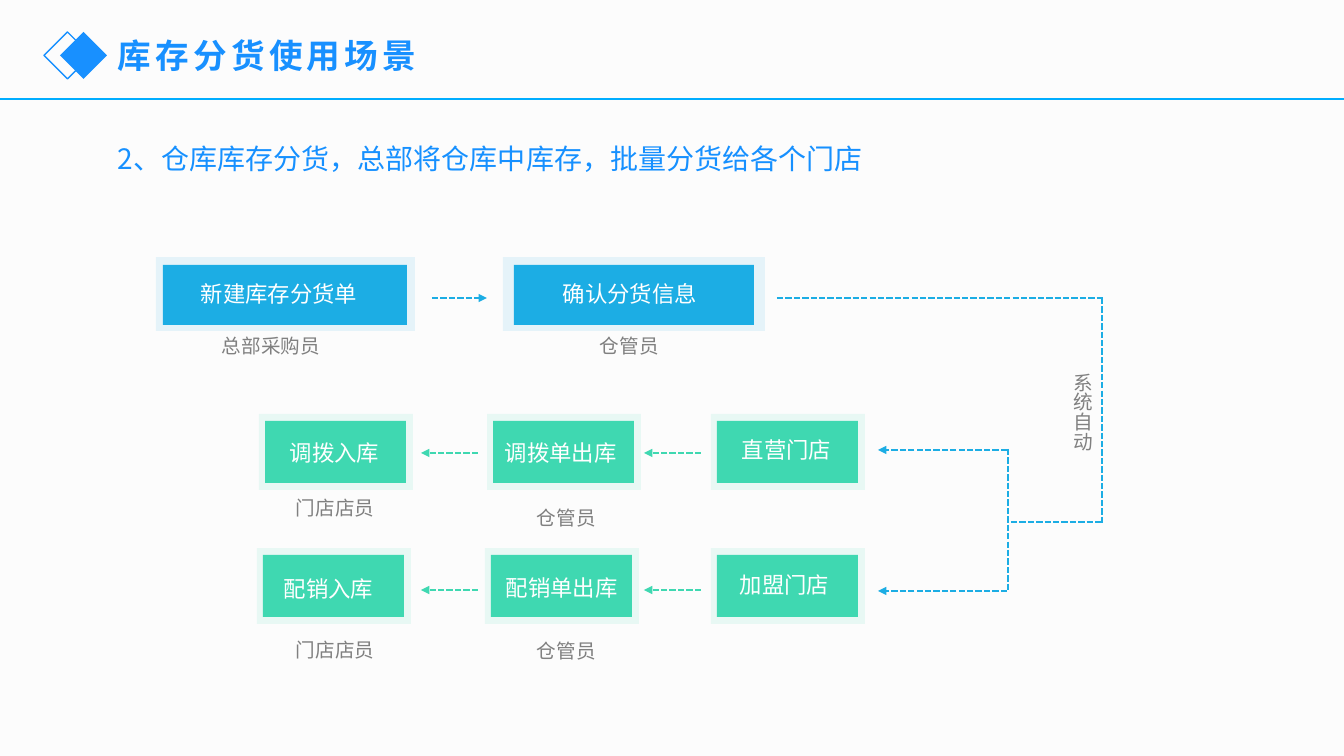
from lxml.etree import SubElement
from pptx import Presentation
from pptx.dml.color import RGBColor
from pptx.enum.dml import MSO_LINE
from pptx.enum.shapes import MSO_CONNECTOR, MSO_SHAPE
from pptx.enum.text import MSO_AUTO_SIZE
from pptx.oxml.ns import qn
from pptx.util import Pt

PX = 914400 / 100.8
FONT = "Noto Sans CJK SC"
COLORS = {
    "background": "FCFCFC",
    "title": "1890FF",
    "heading": "1690FF",
    "rule": "00ADFF",
    "blue": "1CADE4",
    "green": "3FD8B1",
    "gray": "808080",
    "white": "FFFFFF",
}


def px(*lengths):
    return [round(length * PX) for length in lengths]


def rgb(name):
    return RGBColor.from_string(COLORS[name])


def add_text(slide, text, box, size, color, bold=False, spacing=0, wrap=False, vertical=False):
    shape = slide.shapes.add_textbox(*px(*box))
    frame = shape.text_frame
    frame.word_wrap = wrap
    frame.auto_size = MSO_AUTO_SIZE.SHAPE_TO_FIT_TEXT
    if vertical:
        frame._txBody.bodyPr.set("vert", "eaVert")
    run = frame.paragraphs[0].add_run()
    run.text = text
    run.font.name = FONT
    run.font.size = Pt(size)
    run.font.bold = bold
    run.font.color.rgb = rgb(color)
    if spacing:
        run._r.get_or_add_rPr().set("spc", str(spacing * 100))


def add_block(slide, kind, box, fill=None, line=None, opacity=100):
    shape = slide.shapes.add_shape(kind, *px(*box))
    shape.shadow.inherit = False
    if fill:
        shape.fill.solid()
        shape.fill.fore_color.rgb = rgb(fill)
        if opacity < 100:
            color = shape._element.spPr.find(qn("a:solidFill"))[0]
            SubElement(color, qn("a:alpha")).set("val", str(opacity * 1000))
    else:
        shape.fill.background()
    if line:
        shape.line.color.rgb = rgb(line)
        shape.line.width = Pt(1)
    else:
        shape.line.fill.background()


def add_line(slide, ends, color, width=1.5, dashed=True, arrow=False):
    connector = slide.shapes.add_connector(MSO_CONNECTOR.STRAIGHT, *px(*ends))
    connector.line.color.rgb = rgb(color)
    connector.line.width = Pt(width)
    if dashed:
        connector.line.dash_style = MSO_LINE.SQUARE_DOT
    if arrow:
        SubElement(connector.line._get_or_add_ln(), qn("a:tailEnd")).set("type", "triangle")
    SubElement(connector._element.spPr, qn("a:effectLst"))


def add_step(slide, halo, core, color, label, label_box):
    add_block(slide, MSO_SHAPE.RECTANGLE, halo, color, opacity=10)
    add_block(slide, MSO_SHAPE.RECTANGLE, core, color)
    add_text(slide, label, label_box, 16, "white")


def add_header(slide):
    add_line(slide, (0, 99, 1344, 99), "rule", width=1, dashed=False)
    add_block(slide, MSO_SHAPE.DIAMOND, (44, 32, 47, 47), line="title")
    add_block(slide, MSO_SHAPE.DIAMOND, (60, 32, 47, 47), fill="title")
    add_text(slide, "库存分货使用场景", (108, 30, 553, 50), 24, "title", bold=True, spacing=3)
    add_text(slide, "2、仓库库存分货，总部将仓库中库存，批量分货给各个门店",
             (108, 137, 771, 44), 20, "heading", wrap=True)


def add_steps(slide):
    for label, halo_left, halo_width, core_left, core_width, label_left, label_width in (
        ("新建库存分货单", 156, 259, 163, 244, 191, 178),
        ("确认分货信息", 503, 262, 514, 240, 553, 156),
    ):
        add_step(slide, (halo_left, 257, halo_width, 74), (core_left, 265, core_width, 60),
                 "blue", label, (label_left, 275, label_width, 37))
    for label, left, top, label_left, label_top, label_width in (
        ("直营门店", 711, 414, 732, 431, 111),
        ("调拨单出库", 487, 414, 495, 434, 133),
        ("调拨入库", 259, 414, 280, 434, 111),
        ("加盟门店", 711, 548, 730, 566, 111),
        ("配销单出库", 485, 548, 496, 569, 133),
        ("配销入库", 257, 548, 274, 570, 111),
    ):
        add_step(slide, (left, top, 154, 76), (left + 6, top + 7, 141, 62),
                 "green", label, (label_left, label_top, label_width, 37))


def add_roles(slide):
    for role, left, top, width in (
        ("总部采购员", 212, 329, 119),
        ("仓管员", 590, 329, 80),
        ("仓管员", 527, 501, 80),
        ("仓管员", 527, 634, 80),
        ("门店店员", 286, 491, 100),
        ("门店店员", 286, 633, 100),
    ):
        add_text(slide, role, (left, top, width, 34), 14, "gray")
    add_text(slide, "系统自动", (1055, 363, 44, 90), 14, "gray", vertical=True)


def add_flow(slide):
    for ends in (
        (777, 298, 1103, 298),
        (1102, 298, 1102, 523),
        (1011, 522, 1102, 522),
        (1008, 449, 1008, 591),
    ):
        add_line(slide, ends, "blue")
    for ends in ((432, 298, 487, 298), (1007, 450, 878, 450), (1007, 591, 878, 591)):
        add_line(slide, ends, "blue", arrow=True)
    for y in (453, 590):
        for start in (701, 478):
            add_line(slide, (start, y, start - 57, y), "green", arrow=True)


def main():
    presentation = Presentation()
    presentation.slide_width, presentation.slide_height = px(1344, 756)
    slide = presentation.slides.add_slide(presentation.slide_layouts[6])
    slide.background.fill.solid()
    slide.background.fill.fore_color.rgb = rgb("background")
    add_header(slide)
    add_steps(slide)
    add_roles(slide)
    add_flow(slide)
    presentation.save("out.pptx")


if __name__ == "__main__":
    main()
